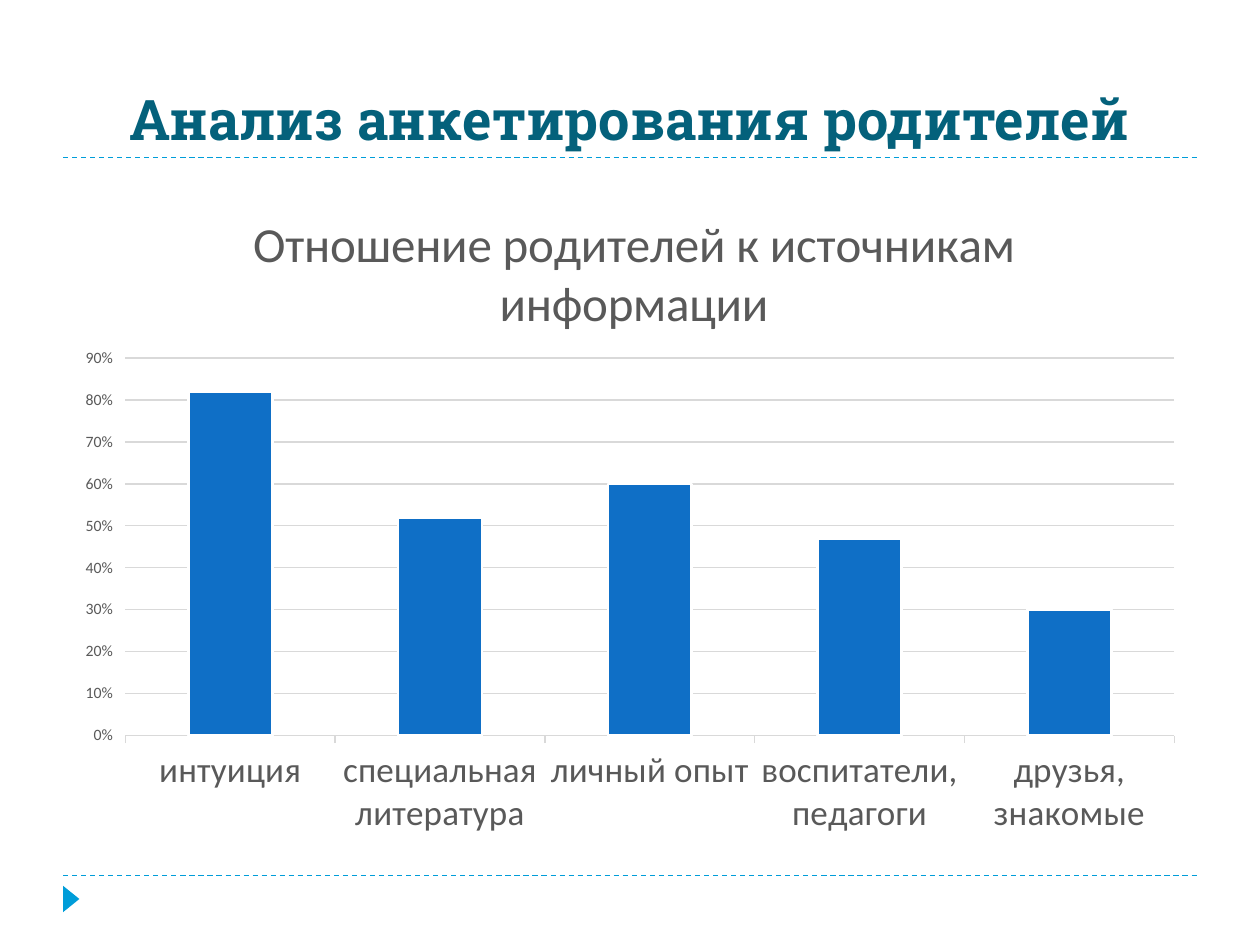
from lxml import etree
from pptx import Presentation
from pptx.chart.data import CategoryChartData
from pptx.dml.color import RGBColor
from pptx.enum.chart import XL_CHART_TYPE, XL_TICK_MARK
from pptx.enum.dml import MSO_LINE
from pptx.enum.shapes import MSO_CONNECTOR, MSO_SHAPE
from pptx.enum.text import MSO_ANCHOR, PP_ALIGN
from pptx.oxml.ns import qn
from pptx.util import Inches, Pt

COLUMN_CLUSTERED = XL_CHART_TYPE.COLUMN_CLUSTERED
OUTSIDE = XL_TICK_MARK.OUTSIDE
DASH = MSO_LINE.DASH
STRAIGHT = MSO_CONNECTOR.STRAIGHT
TRIANGLE = MSO_SHAPE.ISOSCELES_TRIANGLE
BOTTOM = MSO_ANCHOR.BOTTOM
CENTER = PP_ALIGN.CENTER

ACCENT = RGBColor(0x00, 0x9D, 0xD9)
TITLE_COLOR = RGBColor(0x04, 0x61, 0x7B)
BAR_COLOR = RGBColor(0x0F, 0x6F, 0xC6)
LABEL_COLOR = RGBColor(0x59, 0x59, 0x59)
GRID_COLOR = RGBColor(0xD9, 0xD9, 0xD9)
WHITE = RGBColor(0xFF, 0xFF, 0xFF)

LEFT, WIDTH = Inches(0.5), Inches(9)
ANSWERS = {
    "интуиция": 0.82,
    "специальная литература": 0.52,
    "личный опыт": 0.6,
    "воспитатели, педагоги": 0.47,
    "друзья, знакомые": 0.3,
}


def style_font(font, size, color, name="Calibri", bold=False):
    font.size = Pt(size)
    font.color.rgb = color
    font.name = name
    font.bold = bold


def style_line(line, color, width):
    line.color.rgb = color
    line.width = Pt(width)


def set_layout(parent, **values):
    layout = parent.find(qn("c:layout"))
    if layout is None:
        layout = etree.Element(qn("c:layout"))
        text = parent.find(qn("c:tx"))
        if text is None:
            parent.insert(0, layout)
        else:
            text.addnext(layout)
    manual = etree.SubElement(layout, qn("c:manualLayout"))
    if "w" in values:
        etree.SubElement(manual, qn("c:layoutTarget"), val="inner")
    for mode in ("xMode", "yMode"):
        etree.SubElement(manual, qn(f"c:{mode}"), val="edge")
    for key, value in values.items():
        etree.SubElement(manual, qn(f"c:{key}"), val=str(value))


def add_divider(slide, left, top, width):
    divider = slide.shapes.add_connector(STRAIGHT, left, top, left + width, top)
    style_line(divider.line, ACCENT, 0.75)
    divider.line.dash_style = DASH
    etree.SubElement(divider._element.spPr, qn("a:effectLst"))


def add_marker(slide, left, top, width, height):
    marker = slide.shapes.add_shape(TRIANGLE, left, top, width, height)
    marker.rotation = 90
    marker.shadow.inherit = False
    marker.fill.solid()
    marker.fill.fore_color.rgb = ACCENT
    marker.line.fill.background()


def add_title(slide, left, top, width, height):
    frame = slide.shapes.add_textbox(left, top, width, height).text_frame
    frame.word_wrap = True
    frame.vertical_anchor = BOTTOM
    paragraph = frame.paragraphs[0]
    paragraph.text = "Анализ анкетирования родителей"
    paragraph.alignment = CENTER
    style_font(paragraph.font, 32, TITLE_COLOR, "Roboto Slab", True)


def add_answers_chart(slide, left, top, width, height):
    data = CategoryChartData(number_format="0%")
    data.categories = list(ANSWERS)
    data.add_series("Series 1", list(ANSWERS.values()))
    chart = slide.shapes.add_chart(
        COLUMN_CLUSTERED, left, top, width, height, data).chart
    chart.has_legend = False
    chart.font.name = "Calibri"
    chart.font.size = Pt(10)

    title = chart.chart_title
    paragraph = title.text_frame.paragraphs[0]
    paragraph.text = "Отношение родителей к источникам информации"
    style_font(paragraph.font, 28, LABEL_COLOR)
    title.include_in_layout = False
    set_layout(title._element, x=0.16, y=0.05)
    set_layout(chart._chartSpace.chart.plotArea, x=0.055, y=0.28, w=0.925, h=0.555)

    plot = chart.plots[0]
    plot.gap_width = 150
    plot.vary_by_categories = False
    series = plot.series[0]
    series.format.fill.solid()
    series.format.fill.fore_color.rgb = BAR_COLOR
    style_line(series.format.line, WHITE, 1.5)

    category_axis, value_axis = chart.category_axis, chart.value_axis
    for axis, size in ((category_axis, 20), (value_axis, 9)):
        style_font(axis.tick_labels.font, size, LABEL_COLOR)
        axis.major_tick_mark = OUTSIDE
    style_line(category_axis.format.line, GRID_COLOR, 0.75)
    value_axis.format.line.fill.background()
    style_line(value_axis.major_gridlines.format.line, GRID_COLOR, 0.75)
    value_axis.minimum_scale = 0
    value_axis.maximum_scale = 0.9
    value_axis.major_unit = 0.1
    value_axis.tick_labels.number_format = "0%"
    value_axis.tick_labels.number_format_is_linked = False


def main():
    presentation = Presentation()
    presentation.slide_width = Inches(10)
    presentation.slide_height = Inches(7.5)
    slide = presentation.slides.add_slide(presentation.slide_layouts[6])
    for top in (6.95, 1.25):
        add_divider(slide, LEFT, Inches(top), WIDTH)
    add_marker(slide, Inches(0.46), Inches(7.07), Inches(0.21), Inches(0.13))
    add_title(slide, LEFT, Inches(0.17), WIDTH, Inches(1.08))
    add_answers_chart(slide, LEFT, Inches(1.33), WIDTH, Inches(5.4))
    presentation.save("out.pptx")


if __name__ == "__main__":
    main()
